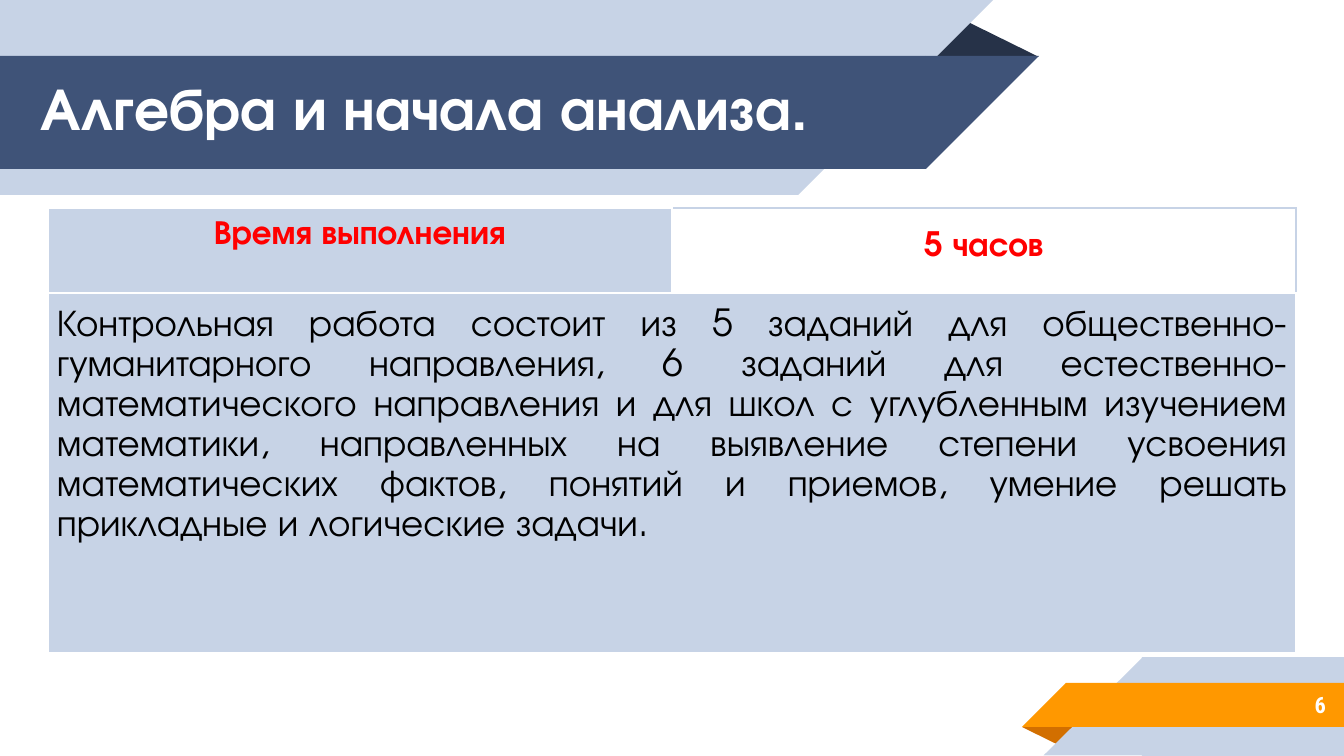
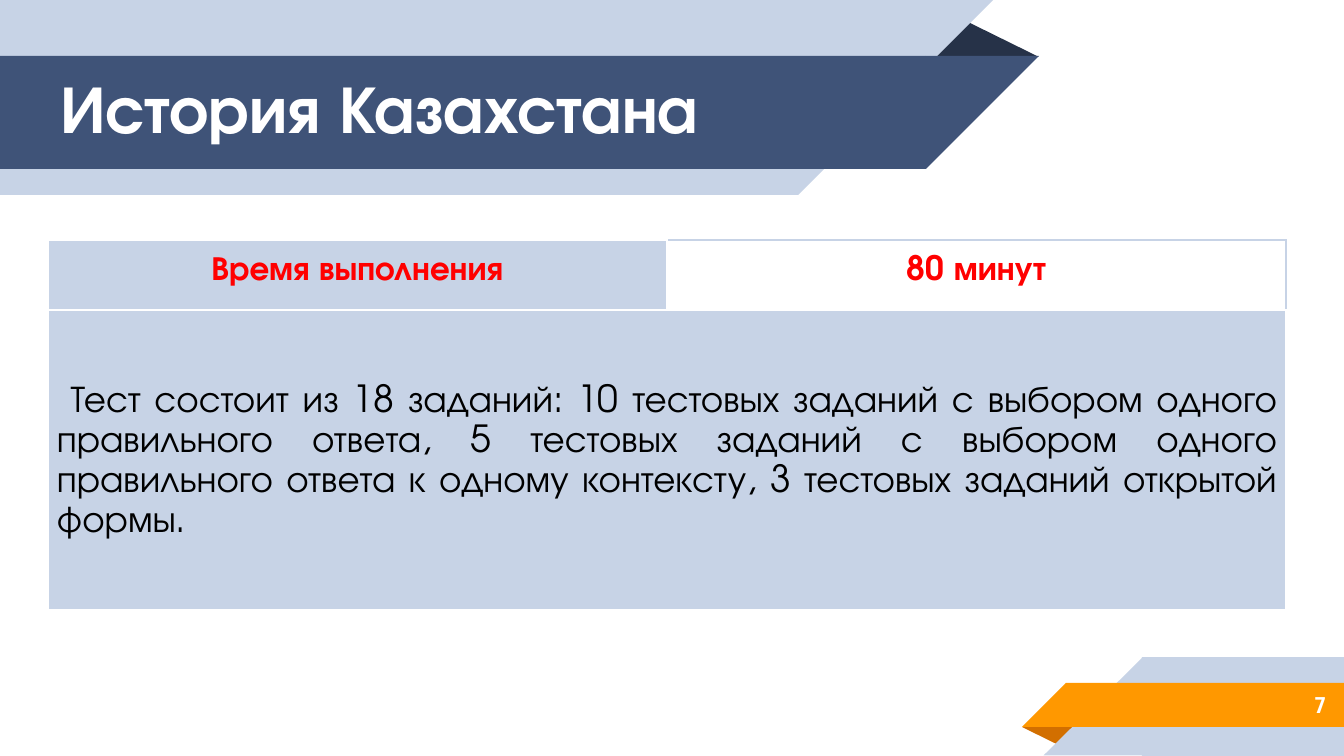
import pptx
import pptx.util
import pptx.dml.color
import pptx.enum.shapes
import pptx.enum.text
import lxml.etree

SCALE = 914400 / 134.4
HUES = {"pale": "C7D3E6", "navy": "3F5378", "dark": "263248", "gold": "FF9800",
        "rust": "D26F00", "white": "FFFFFF", "red": "FF0000", "black": "000000"}
FACE = "TeX Gyre Adventor"
FORM = pptx.enum.shapes.MSO_SHAPE
ALIGN = pptx.enum.text.PP_ALIGN
ANCHOR = pptx.enum.text.MSO_ANCHOR
MIDDLE = ANCHOR.MIDDLE

STYLES = {
    "label": {"size": 18, "bold": True, "hue": "red", "align": ALIGN.CENTER,
              "gap": pptx.util.Pt(13)},
    "body": {"size": 20, "bold": False, "hue": "black", "align": ALIGN.JUSTIFY, "gap": 1.15},
    "page": {"size": 12, "bold": True, "hue": "white", "align": ALIGN.RIGHT,
             "face": "Roboto Condensed"},
}

PAGES = [
    {"title": "Алгебра и начала анализа.", "left": 27, "size": 32, "num": 6,
     "box": (48, 208, 1248, 445), "top": 85, "anchor": ANCHOR.TOP, "drop": 24,
     "time": "5 часов",
     "text": "Контрольная работа состоит из 5 заданий для общественно-гуманитарного "
             "направления, 6 заданий для естественно-математического направления и для школ "
             "с углубленным изучением математики, направленных на выявление степени усвоения "
             "математических фактов, понятий и приемов, умение решать прикладные "
             "и логические задачи."},
    {"title": "История Казахстана", "left": 47, "size": 36, "num": 7,
     "box": (48, 240, 1238, 370), "top": 70, "anchor": MIDDLE, "drop": 0,
     "time": "80 минут",
     "text": " Тест состоит из 18 заданий: 10 тестовых заданий с выбором одного правильного "
             "ответа, 5 тестовых заданий с выбором одного правильного ответа к одному "
             "контексту, 3 тестовых заданий открытой формы."},
]


def px(n):
    """Turn pixels into EMU."""
    return pptx.util.Emu(round(n * SCALE))


def rgb(hue):
    """Look up a named colour."""
    return pptx.dml.color.RGBColor.from_string(HUES[hue])


def put(obj, vals):
    """Set attributes from a dict."""
    for key, val in vals.items():
        setattr(obj, key, val)


def write(frame, text, size, bold, hue, align, gap=None, face=FACE):
    """Fill a text frame with one formatted paragraph."""
    para = frame.paragraphs[0]
    put(para, {"alignment": align, "line_spacing": gap})
    run = para.add_run()
    run.text = text
    put(run.font, {"size": pptx.util.Pt(size), "bold": bold, "name": face})
    run.font.color.rgb = rgb(hue)


def pad(frame):
    """Centre a text frame vertically with even insets."""
    put(frame, {"word_wrap": True, "vertical_anchor": MIDDLE,
                "auto_size": pptx.enum.text.MSO_AUTO_SIZE.NONE})
    put(frame, {"margin_" + side: px(13) for side in ("left", "top", "right", "bottom")})


def draw(slide, org, parts):
    """Draw flat shapes relative to an origin."""
    for form, hue, x, y, w, h, turn in parts:
        shape = slide.shapes.add_shape(form, px(org[0] + x), px(org[1] + y), px(w), px(h))
        shape.shadow.inherit = False
        shape.rotation = turn
        shape.fill.solid()
        shape.fill.fore_color.rgb = rgb(hue)
        shape.line.fill.background()
        if form == FORM.ISOSCELES_TRIANGLE:
            shape.adjustments[0] = 0.324


def head(slide, org, page):
    """Draw the folded title band and place the title on it."""
    draw(slide, org, [
        (FORM.ISOSCELES_TRIANGLE, "dark", 925, 19, 114, 38, 0),
        (FORM.RECTANGLE, "pale", 0, 0, 798, 195, 0),
        (FORM.RIGHT_TRIANGLE, "pale", 798, 0, 195, 195, 90),
        (FORM.RECTANGLE, "navy", 0, 56, 926, 113, 0),
        (FORM.RIGHT_TRIANGLE, "navy", 926, 56, 113, 113, 90),
    ])
    title = slide.shapes.title
    put(title, {"left": px(org[0] + page["left"]), "top": px(org[1] + 79),
                "width": px(964), "height": px(55)})
    pad(title.text_frame)
    write(title.text_frame, page["title"], page["size"], True, "white", ALIGN.LEFT)
    slide.shapes.element.append(title.element)


def foot(slide, org, num):
    """Draw the folded footer band with the page number."""
    draw(slide, org, [
        (FORM.ISOSCELES_TRIANGLE, "rust", 0, 70, 57, 19, 180),
        (FORM.RECTANGLE, "pale", 120, 0, 202, 99, 0),
        (FORM.RIGHT_TRIANGLE, "pale", 22, 0, 98, 99, 270),
        (FORM.RECTANGLE, "gold", 44, 26, 278, 44, 0),
        (FORM.RIGHT_TRIANGLE, "gold", 0, 26, 44, 44, 270),
    ])
    box = slide.shapes.add_textbox(px(org[0] + 98), px(org[1] + 24), px(219), px(47))
    pad(box.text_frame)
    write(box.text_frame, str(num), **STYLES["page"])


def edge(cell, hues):
    """Give a cell thin left, right, top and bottom borders."""
    props = cell._tc.get_or_add_tcPr()
    space = pptx.oxml.ns.nsdecls("a")
    for i, (side, hue) in enumerate(zip("LRTB", hues)):
        props.insert(i, pptx.oxml.parse_xml(
            f'<a:ln{side} {space} w="9525"><a:solidFill><a:srgbClr val="{HUES[hue]}"/>'
            f'</a:solidFill></a:ln{side}>'))


def grid(slide, box, page):
    """Build the table: a time row above one merged description."""
    x, y, w, h = box
    table = slide.shapes.add_table(2, 2, px(x), px(y), px(w), px(h)).table
    put(table, {"first_row": False, "horz_banding": False})
    for col in table.columns:
        col.width = px(w // 2)
    for row, high in zip(table.rows, (page["top"], h - page["top"])):
        row.height = px(high)
    table.cell(1, 0).merge(table.cell(1, 1))
    for cell in table.iter_cells():
        put(cell, {"margin_left": px(9), "margin_right": px(9), "margin_top": px(11),
                   "margin_bottom": px(11), "vertical_anchor": MIDDLE})
        cell.fill.solid()
        cell.fill.fore_color.rgb = rgb("pale")
    label, time, text = table.cell(0, 0), table.cell(0, 1), table.cell(1, 0)
    time.fill.background()
    for cell in (label, text, table.cell(1, 1)):
        edge(cell, ["white"] * 4)
    edge(time, ["white", "pale", "pale", "pale"])
    label.margin_bottom = px(11 + page["drop"])
    text.vertical_anchor = page["anchor"]
    write(label.text_frame, "Время выполнения", **STYLES["label"])
    write(time.text_frame, page["time"], **STYLES["label"])
    write(text.text_frame, page["text"], **STYLES["body"])


def main():
    """Build both slides and save them."""
    deck = pptx.Presentation()
    put(deck, {"slide_width": px(1344), "slide_height": px(756)})
    for page in PAGES:
        slide = deck.slides.add_slide(deck.slide_layouts[5])
        head(slide, (0, 0), page)
        foot(slide, (1022, 657), page["num"])
        grid(slide, page["box"], page)
    deck.save("out.pptx")


if __name__ == "__main__":
    main()
